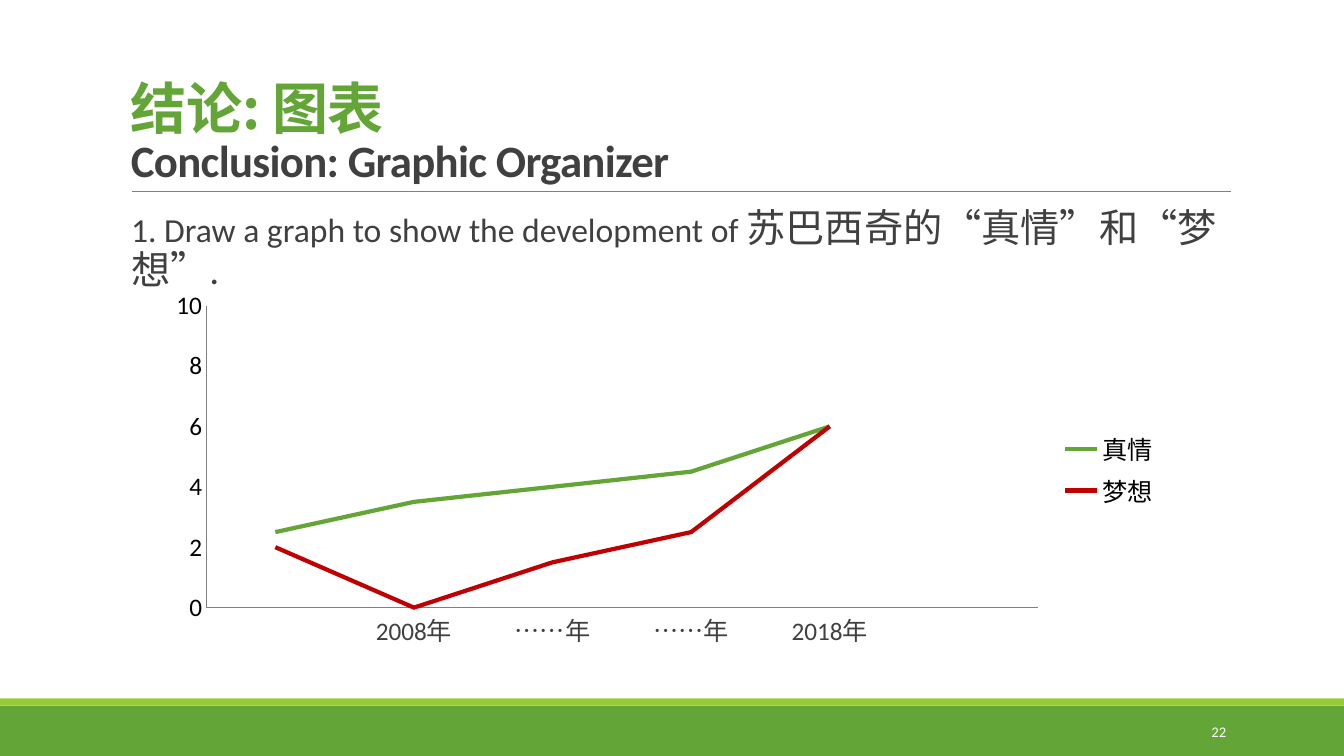
from lxml import etree
from pptx import Presentation
from pptx.chart.data import CategoryChartData
from pptx.dml.color import RGBColor
from pptx.enum.chart import XL_CHART_TYPE, XL_LEGEND_POSITION, XL_TICK_MARK
from pptx.enum.shapes import MSO_CONNECTOR, MSO_SHAPE
from pptx.enum.text import MSO_ANCHOR, PP_ALIGN
from pptx.oxml import parse_xml
from pptx.oxml.ns import nsdecls, qn
from pptx.util import Inches, Pt

GREEN = RGBColor(0x63, 0xA5, 0x37)
LIME = RGBColor(0x99, 0xCB, 0x38)
RED = RGBColor(0xC0, 0x00, 0x00)
DARK = RGBColor(0x40, 0x40, 0x40)
GRAY = RGBColor(0x80, 0x80, 0x80)
BLACK = RGBColor(0x00, 0x00, 0x00)
WHITE = RGBColor(0xFF, 0xFF, 0xFF)

LATIN, CJK = "Calibri", "Noto Sans CJK SC"
TOP, MIDDLE, BOTTOM = MSO_ANCHOR.TOP, MSO_ANCHOR.MIDDLE, MSO_ANCHOR.BOTTOM
RIGHT = PP_ALIGN.RIGHT
NO_TICK = XL_TICK_MARK.NONE


def set_east_asian(r_pr):
    etree.SubElement(r_pr, qn("a:ea")).set("typeface", CJK)


def add_run(p, text, size, color=DARK, bold=False, font=LATIN, spacing=None):
    r = p.add_run()
    r.text = text
    f = r.font
    f.size, f.bold, f.name = Pt(size), bold, font
    f.color.rgb = color
    r_pr = r._r.get_or_add_rPr()
    set_east_asian(r_pr)
    if spacing is not None:
        r_pr.set("spc", str(int(spacing * 100)))


class SlideBuilder:
    def __init__(self, prs):
        self.s = prs.slides.add_slide(prs.slide_layouts[6])

    def bar(self, x, y, w, h, color):
        sp = self.s.shapes.add_shape(
            MSO_SHAPE.RECTANGLE, Inches(x), Inches(y), Inches(w), Inches(h))
        sp.shadow.inherit = False
        sp.fill.solid()
        sp.fill.fore_color.rgb = color
        sp.line.fill.background()

    def rule(self, x1, x2, y, color, width):
        cn = self.s.shapes.add_connector(
            MSO_CONNECTOR.STRAIGHT, Inches(x1), Inches(y), Inches(x2), Inches(y))
        cn.line.color.rgb = color
        cn.line.width = Pt(width)
        etree.SubElement(cn._element.spPr, qn("a:effectLst"))

    def text(self, x, y, w, h, anchor=TOP, margin=0.1):
        """Add a text box and return its first paragraph."""
        tf = self.s.shapes.add_textbox(
            Inches(x), Inches(y), Inches(w), Inches(h)).text_frame
        tf.word_wrap = True
        tf.vertical_anchor = anchor
        tf.margin_left = tf.margin_right = Inches(margin)
        return tf.paragraphs[0]

    def line_chart(self, x, y, w, h, cats, series, plot):
        data = CategoryChartData()
        data.categories = cats
        for name, values, _ in series:
            data.add_series(name, values)
        chart = self.s.shapes.add_chart(
            XL_CHART_TYPE.LINE, Inches(x), Inches(y), Inches(w), Inches(h), data).chart
        chart.has_title = False
        chart.font.name, chart.font.size = LATIN, Pt(18)
        chart.font.color.rgb = BLACK
        set_east_asian(chart.font._element)

        for ser, (_, _, color) in zip(chart.plots[0].series, series):
            ser.smooth = False
            ser.format.line.color.rgb = color
            ser.format.line.width = Pt(3)

        cat_axis, val_axis = chart.category_axis, chart.value_axis
        for axis in (cat_axis, val_axis):
            axis.major_tick_mark = axis.minor_tick_mark = NO_TICK
            axis.has_major_gridlines = False
            axis.format.line.color.rgb = GRAY
            axis.format.line.width = Pt(0.75)
        cat_axis.tick_labels.font.size = Pt(18)
        cat_axis.tick_labels.font.color.rgb = DARK
        val_axis.minimum_scale, val_axis.maximum_scale = 0, 10
        val_axis.major_unit = 2

        chart.has_legend = True
        chart.legend.position = XL_LEGEND_POSITION.RIGHT
        chart.legend.include_in_layout = False
        self.place_plot(chart, plot)

    def place_plot(self, chart, plot):
        """Fix the inner plot area as fractions of the chart frame."""
        area = chart._chartSpace.chart.plotArea
        for old in area.findall(qn("c:layout")):
            area.remove(old)
        sizes = "".join(f'<c:{k} val="{v}"/>' for k, v in zip("xywh", plot))
        area.insert(0, parse_xml(
            f'<c:layout {nsdecls("c")}><c:manualLayout><c:layoutTarget val="inner"/>'
            f'<c:xMode val="edge"/><c:yMode val="edge"/>{sizes}'
            '</c:manualLayout></c:layout>'))


def main():
    prs = Presentation()
    prs.slide_width, prs.slide_height = Inches(13.33), Inches(7.5)
    b = SlideBuilder(prs)

    # Footer bars and title rule
    b.bar(0, 7, 13.33, 0.5, GREEN)
    b.bar(0, 6.93, 13.33, 0.07, LIME)
    b.rule(1.31, 12.21, 1.9, GRAY, 0.5)

    # Title
    p = b.text(1.2, 0.31, 11, 1.59, anchor=BOTTOM)
    p.line_spacing = 0.85
    add_run(p, "结论: 图表", 40, GREEN, bold=True, font=CJK, spacing=-0.5)
    p.add_line_break()
    add_run(p, "Conclusion: Graphic Organizer", 32, bold=True, spacing=-0.5)

    # Task
    p = b.text(1.2, 2.02, 11.58, 4.4, margin=0)
    p.line_spacing = 0.9
    p.space_before, p.space_after = Pt(12), Pt(2)
    p._p.get_or_add_pPr().set("marL", str(Inches(0.1)))
    add_run(p, "1. Draw a graph to show the development of ", 24)
    add_run(p, "苏巴西奇的“真情”和“梦想”.", 28)

    # Chart, with an empty last category
    b.line_chart(
        1.54, 2.81, 10.06, 3.7,
        ["", "2008年", "……年", "……年", "2018年", ""],
        [("真情", (2.5, 3.5, 4, 4.5, 6, None), GREEN),
         ("梦想", (2, 0, 1.5, 2.5, 6, None), RED)],
        plot=(0.05, 0.06, 0.82, 0.81))

    # Slide number
    p = b.text(10.83, 7.06, 1.43, 0.4, anchor=MIDDLE)
    p.alignment = RIGHT
    add_run(p, "22", 10.5, WHITE)

    prs.save("out.pptx")


if __name__ == "__main__":
    main()
